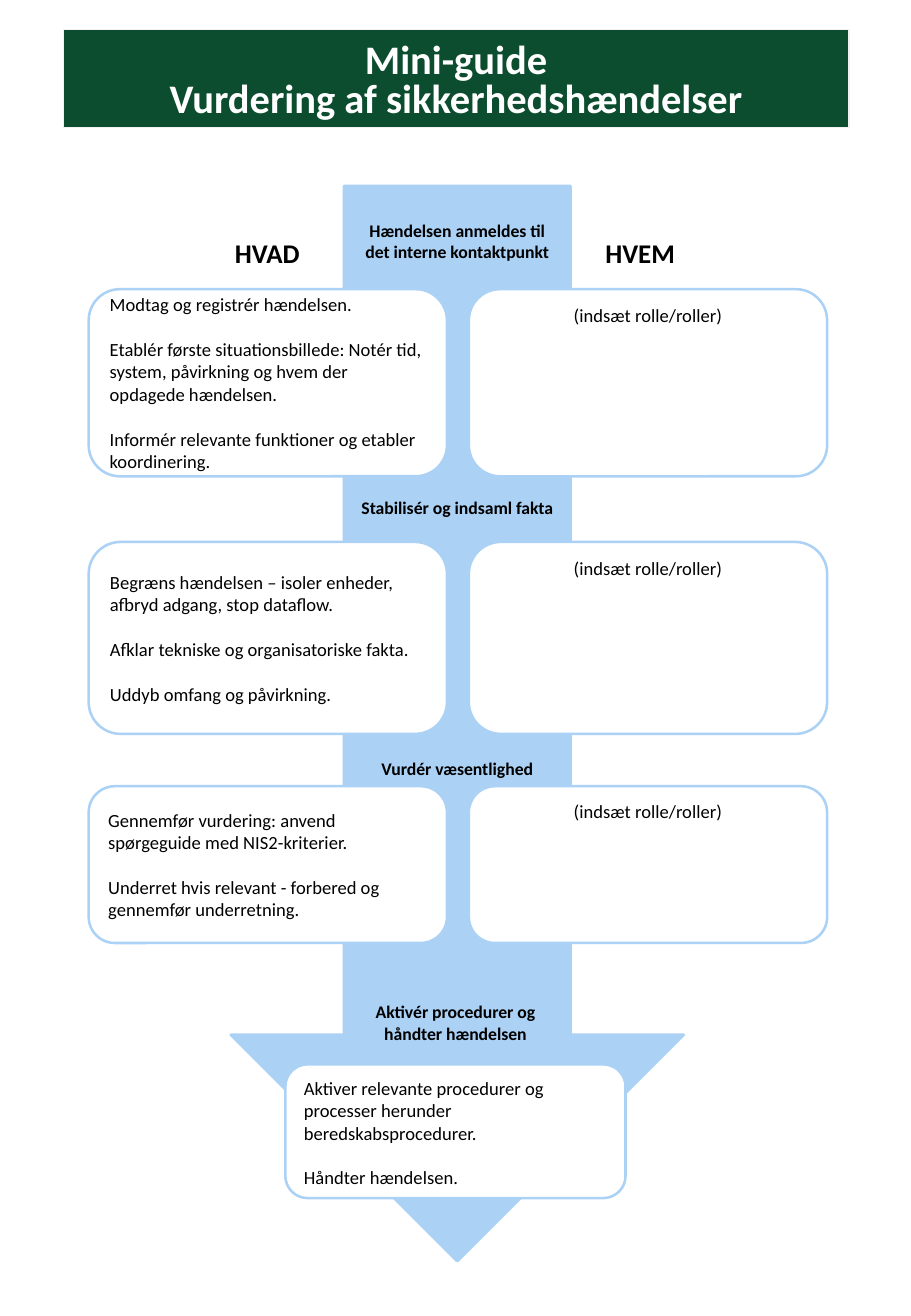
from pptx import Presentation
from pptx import util as u
from pptx.dml import color
from pptx.enum import shapes, text

GREEN = color.RGBColor(0x0C, 0x4D, 0x2F)
BLUE = color.RGBColor(0xAB, 0xD1, 0xF5)
GREY = color.RGBColor(0xF2, 0xF2, 0xF2)
WHITE = color.RGBColor(0xFF, 0xFF, 0xFF)
BLACK = color.RGBColor(0, 0, 0)

PAGE_WIDTH, PAGE_HEIGHT = 7.5, 10.83
COLUMN_WIDTH, COLUMN_GAP = 2.95, 0.18
ROW_LEFT, ROW_WIDTH = 0.73, 2 * COLUMN_WIDTH + COLUMN_GAP
LABEL_LEFT, LABEL_WIDTH = 2.84, 1.85
LEFT, CENTER = text.PP_ALIGN.LEFT, text.PP_ALIGN.CENTER
TOP, MIDDLE, BOTTOM = (
    text.MSO_ANCHOR.TOP, text.MSO_ANCHOR.MIDDLE, text.MSO_ANCHOR.BOTTOM)

BODY = {"size": u.Pt(11), "bold": False}
LABEL = {"size": u.Pt(10.5), "bold": True}
HEADING = {"size": u.Pt(16), "bold": True}
TITLE = {"size": u.Pt(24), "bold": True}
ROLE = "(indsæt rolle/roller)"

STEPS = [
    ((1.76, 0.62), "Hændelsen anmeldes til det interne kontaktpunkt",
     (2.38, 1.54), [
         "Modtag og registrér hændelsen.",
         "Etablér første situationsbillede: Notér tid, system, påvirkning "
         "og hvem der opdagede hændelsen.",
         "Informér relevante funktioner og etabler koordinering."]),
    ((4.04, 0.36), "Stabilisér og indsaml fakta",
     (4.46, 1.58), [
         "Begræns hændelsen – isoler enheder, afbryd adgang, stop dataflow.",
         "Afklar tekniske og organisatoriske fakta.",
         "Uddyb omfang og påvirkning."]),
    ((6.19, 0.29), "Vurdér væsentlighed",
     (6.47, 1.29), [
         "Gennemfør vurdering: anvend spørgeguide med NIS2-kriterier.",
         "Underret hvis relevant - forbered og gennemfør underretning."]),
]


def inches(box):
    return [u.Inches(length) for length in box]


def paint(shape, fill, line, width):
    shape.fill.solid()
    shape.fill.fore_color.rgb = fill
    shape.line.color.rgb = line
    shape.line.width = u.Pt(width)
    shape.shadow.inherit = False


def write(shape, lines, style, ink=BLACK, align=CENTER, anchor=TOP,
          gap=0, spacing=1.0):
    frame = shape.text_frame
    frame.word_wrap = True
    frame.auto_size = text.MSO_AUTO_SIZE.NONE
    frame.vertical_anchor = anchor
    for index, line in enumerate(lines):
        para = frame.add_paragraph() if index else frame.paragraphs[0]
        layout = {"alignment": align, "line_spacing": spacing,
                  "space_before": u.Pt(gap if index else 0)}
        for name, value in layout.items():
            setattr(para, name, value)
        span = para.add_run()
        span.text = line
        for name, value in {"name": "Calibri", **style}.items():
            setattr(span.font, name, value)
        span.font.color.rgb = ink


def add_label(page, box, line, style=LABEL):
    write(page.shapes.add_textbox(*inches(box)), [line], style)


def add_card(page, box, lines, align, anchor):
    card = page.shapes.add_shape(
        shapes.MSO_SHAPE.ROUNDED_RECTANGLE, *inches(box))
    paint(card, WHITE, BLUE, 1.5)
    write(card, lines, BODY, align=align, anchor=anchor, gap=13.4)


def add_banner(page, box):
    banner = page.shapes.title
    for name, value in zip(("left", "top", "width", "height"), inches(box)):
        setattr(banner, name, value)
    paint(banner, GREEN, GREY, 0.75)
    write(banner, ["Mini-guide", "Vurdering af sikkerhedshændelser"],
          TITLE, ink=WHITE, anchor=BOTTOM, spacing=0.8)


def add_flow(page, box):
    arrow = page.shapes.add_shape(shapes.MSO_SHAPE.DOWN_ARROW, *inches(box))
    paint(arrow, BLUE, BLUE, 1.5)


def add_headings(page, box):
    left, top, width, height = box
    for column, heading in enumerate(("HVAD", "HVEM")):
        add_label(page, (left + column * (width - 0.94), top, 0.94, height),
                  heading, HEADING)


def add_step(page, box, tasks):
    left, top, width, height = box
    column_width = (width - COLUMN_GAP) / 2
    columns = [(tasks, LEFT, MIDDLE), ([ROLE], CENTER, TOP)]
    for column, (lines, align, anchor) in enumerate(columns):
        x = left + column * (column_width + COLUMN_GAP)
        add_card(page, (x, top, column_width, height), lines, align, anchor)


def add_outcome(page, box):
    left, top, width, height = box
    add_label(page, (left + (width - LABEL_WIDTH) / 2, top,
                     LABEL_WIDTH, 0.46),
              "Aktivér procedurer og håndter hændelsen")
    add_card(page, (left, top + 0.57, width, height - 0.57), [
        "Aktiver relevante procedurer og processer herunder "
        "beredskabsprocedurer.",
        "Håndter hændelsen."], LEFT, TOP)


def main():
    deck = Presentation()
    deck.slide_width, deck.slide_height = inches((PAGE_WIDTH, PAGE_HEIGHT))
    page = deck.slides.add_slide(deck.slide_layouts[5])
    add_flow(page, (1.9, 1.53, 3.73, 8.85))
    add_banner(page, (0.52, 0.24, 6.47, 0.81))
    add_headings(page, (1.73, 1.9, 4.01, 0.34))
    for (label_top, label_height), label, (top, height), tasks in STEPS:
        add_step(page, (ROW_LEFT, top, ROW_WIDTH, height), tasks)
        add_label(page, (LABEL_LEFT, label_top, LABEL_WIDTH, label_height),
                  label)
    add_outcome(page, (2.35, 8.19, 2.8, 1.67))
    deck.save("out.pptx")


if __name__ == "__main__":
    main()
